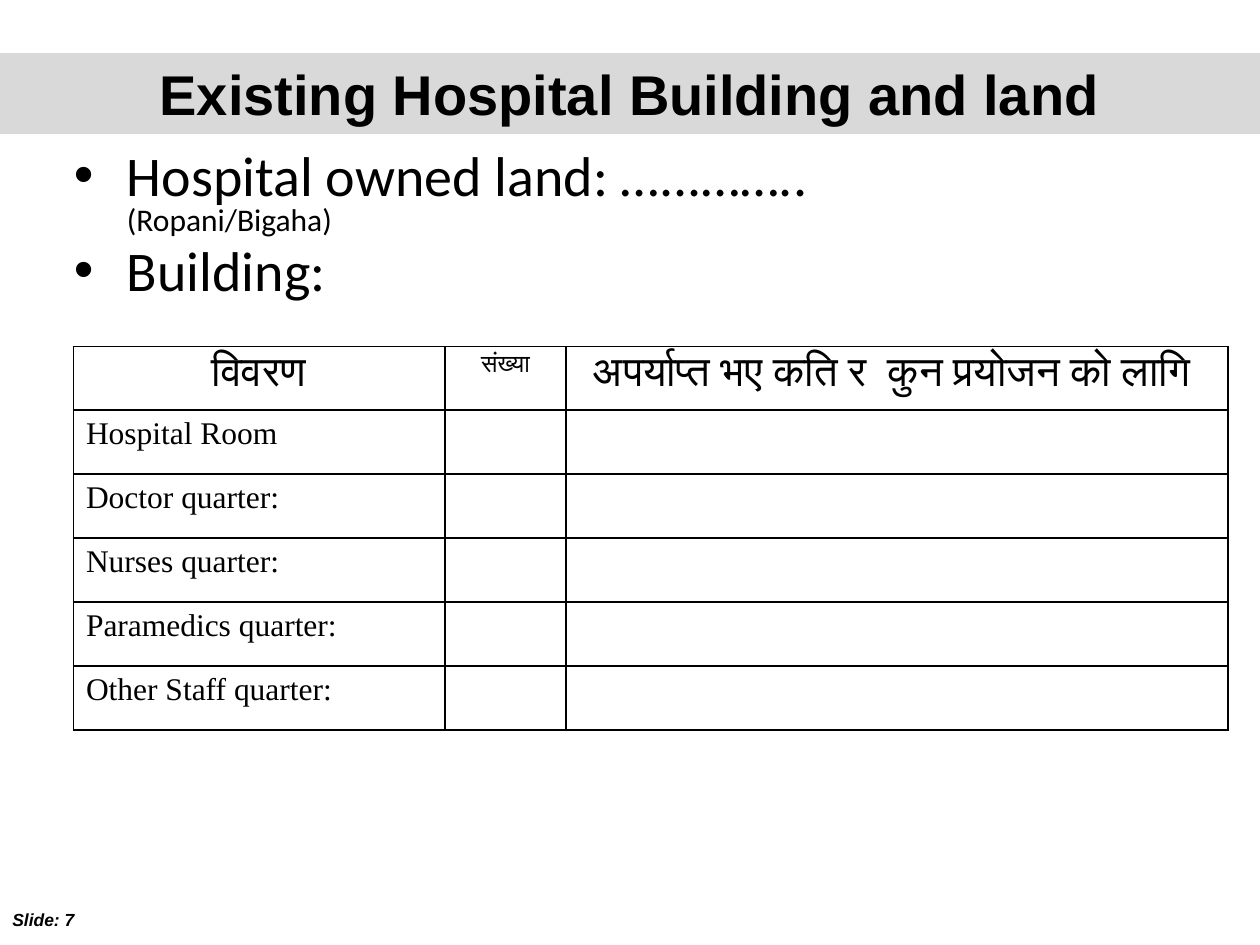
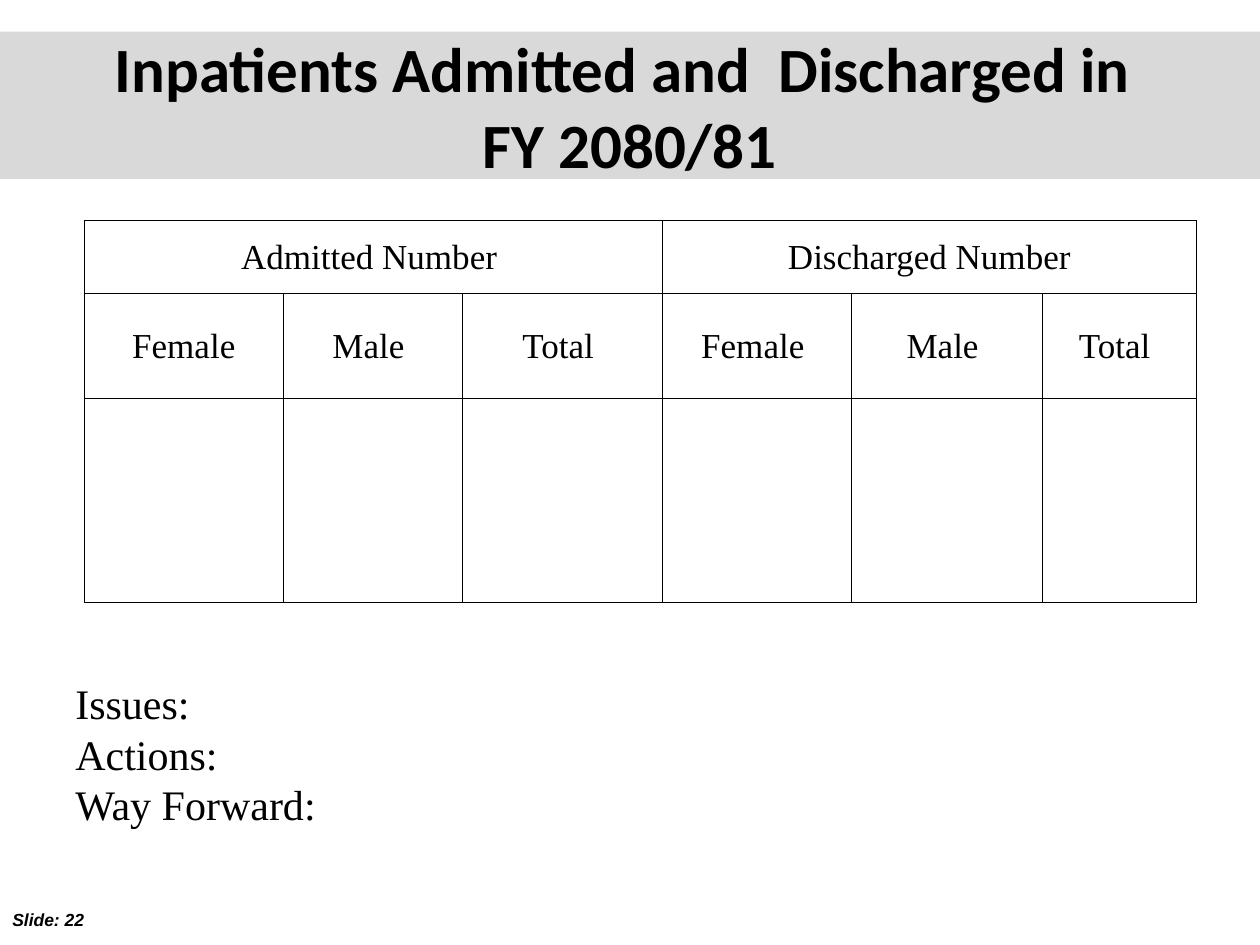
from dataclasses import dataclass

from lxml import etree
from pptx import Presentation
from pptx.dml.color import RGBColor
from pptx.enum.shapes import MSO_SHAPE
from pptx.enum.text import MSO_ANCHOR, PP_ALIGN
from pptx.oxml.ns import qn
from pptx.util import Cm, Pt

RECT = MSO_SHAPE.RECTANGLE
TOP, MIDDLE = MSO_ANCHOR.TOP, MSO_ANCHOR.MIDDLE
LEFT, CENTER = PP_ALIGN.LEFT, PP_ALIGN.CENTER


@dataclass
class Theme:
    ink = RGBColor(0, 0, 0)
    band = RGBColor(0xD9, 0xD9, 0xD9)
    sans = "Arial"
    body = "Calibri"
    serif = "Times New Roman"
    foot = 10
    tiny = 14
    small = 18
    cell = 20
    text = 24
    large = 32
    huge = 36


def write(frame, lines, font, size, align=LEFT, bold=False, slant=False):
    frame.word_wrap = True
    for i, line in enumerate(lines):
        para = frame.paragraphs[0] if i == 0 else frame.add_paragraph()
        para.text = line
        para.alignment = align
        para.font.name = font
        para.font.size = Pt(size)
        para.font.bold = bold
        para.font.italic = slant
        para.font.color.rgb = Theme.ink


def grid(slide, left, top, cols, rows, width):
    table = slide.shapes.add_table(
        len(rows), len(cols), Cm(left), Cm(top), Cm(sum(cols)), Cm(sum(rows))
    ).table
    table.first_row = False
    table.horz_banding = False
    for col, size in zip(table.columns, cols):
        col.width = Cm(size)
    for row, size in zip(table.rows, rows):
        row.height = Cm(size)
    for cell in table.iter_cells():
        props = cell._tc.get_or_add_tcPr()
        for side in ("a:lnL", "a:lnR", "a:lnT", "a:lnB"):
            line = etree.SubElement(props, qn(side), w=str(Pt(width)))
            fill = etree.SubElement(line, qn("a:solidFill"))
            etree.SubElement(fill, qn("a:srgbClr"), val=str(Theme.ink))
        cell.fill.background()
    return table


deck = Presentation()
deck.slide_width, deck.slide_height = Cm(25.4), Cm(19.05)

heads = [
    (7, "Existing Hospital Building and land", Theme.sans, Theme.large, 1.07, 1.63),
    (22, "Inpatients Admitted and  Discharged in \vFY 2080/81",
     Theme.body, Theme.huge, 0.64, 2.97),
]
for number, title, font, size, top, height in heads:
    slide = deck.slides.add_slide(deck.slide_layouts[6])
    band = slide.shapes.add_shape(RECT, 0, Cm(top), deck.slide_width, Cm(height))
    band.shadow.inherit = False
    band.fill.solid()
    band.fill.fore_color.rgb = Theme.band
    band.line.fill.background()
    band.text_frame.vertical_anchor = MIDDLE
    write(band.text_frame, [title], font, size, CENTER, bold=True)
    foot = slide.shapes.add_textbox(0, Cm(18.21), Cm(2.34), Cm(0.69))
    write(foot.text_frame, [f"Slide: {number}"], Theme.sans, Theme.foot,
          bold=True, slant=True)

land, flow = deck.slides

notes = land.shapes.add_textbox(Cm(1.07), Cm(2.97), Cm(23.7), Cm(3.6)).text_frame
write(notes, ["Hospital owned land: …...…….. \v", "Building:"],
      Theme.body, Theme.large)
unit = notes.paragraphs[0].add_run()
unit.text = "(Ropani/Bigaha)"
unit.font.size = Pt(Theme.small)
for para in notes.paragraphs:
    para.line_spacing = 0.8
    para.space_before = Pt(6.4)
    props = para._p.get_or_add_pPr()
    props.set("marL", str(Cm(1.24)))
    props.set("indent", str(-Cm(1.07)))
    etree.SubElement(props, qn("a:buFont"), typeface=Theme.sans)
    etree.SubElement(props, qn("a:buChar"), char="•")
    mark = props.find(qn("a:defRPr"))
    if mark is not None:
        props.append(mark)

rooms = grid(land, 1.48, 6.99, [7.49, 2.44, 13.34], [1.2] + [1.29] * 5, 1)
labels = [
    ("विवरण", Theme.text),
    ("संख्या", Theme.tiny),
    ("अपर्याप्त भए कति र  कुन प्रयोजन को लागि ", Theme.text),
]
for col, (label, size) in enumerate(labels):
    write(rooms.cell(0, col).text_frame, [label], Theme.serif, size, CENTER)
kinds = ["Hospital Room", "Doctor quarter:", "Nurses quarter:",
         "Paramedics quarter:", "Other Staff quarter:"]
for row, kind in enumerate(kinds, 1):
    write(rooms.cell(row, 0).text_frame, [kind], Theme.serif, Theme.small)

counts = grid(flow, 1.7, 4.44, [4.01, 3.61, 4.04, 3.81, 3.84, 3.1],
              [1.48, 2.12, 4.11], 0.5)
groups = ["Admitted Number ", "Discharged Number"]
for i, group in enumerate(groups):
    first = counts.cell(0, 3 * i)
    first.merge(counts.cell(0, 3 * i + 2))
    first.text = group
sexes = ["Female", "Male ", "Total ", "Female ", "Male ", "Total "]
for col, sex in enumerate(sexes):
    counts.cell(1, col).text = sex
for cell in counts.iter_cells():
    if cell.text:
        cell.vertical_anchor = MIDDLE
        cell.margin_left = cell.margin_right = cell.margin_top = Cm(0.03)
        cell.margin_bottom = 0
        write(cell.text_frame, [cell.text], Theme.serif, Theme.cell, CENTER)

plan = flow.shapes.add_textbox(Cm(1.27), Cm(13.54), Cm(23.06), Cm(3.33))
plan.text_frame.vertical_anchor = TOP
write(plan.text_frame, ["Issues:", "Actions:", "Way Forward:"],
      Theme.serif, Theme.text)

deck.save("out.pptx")
